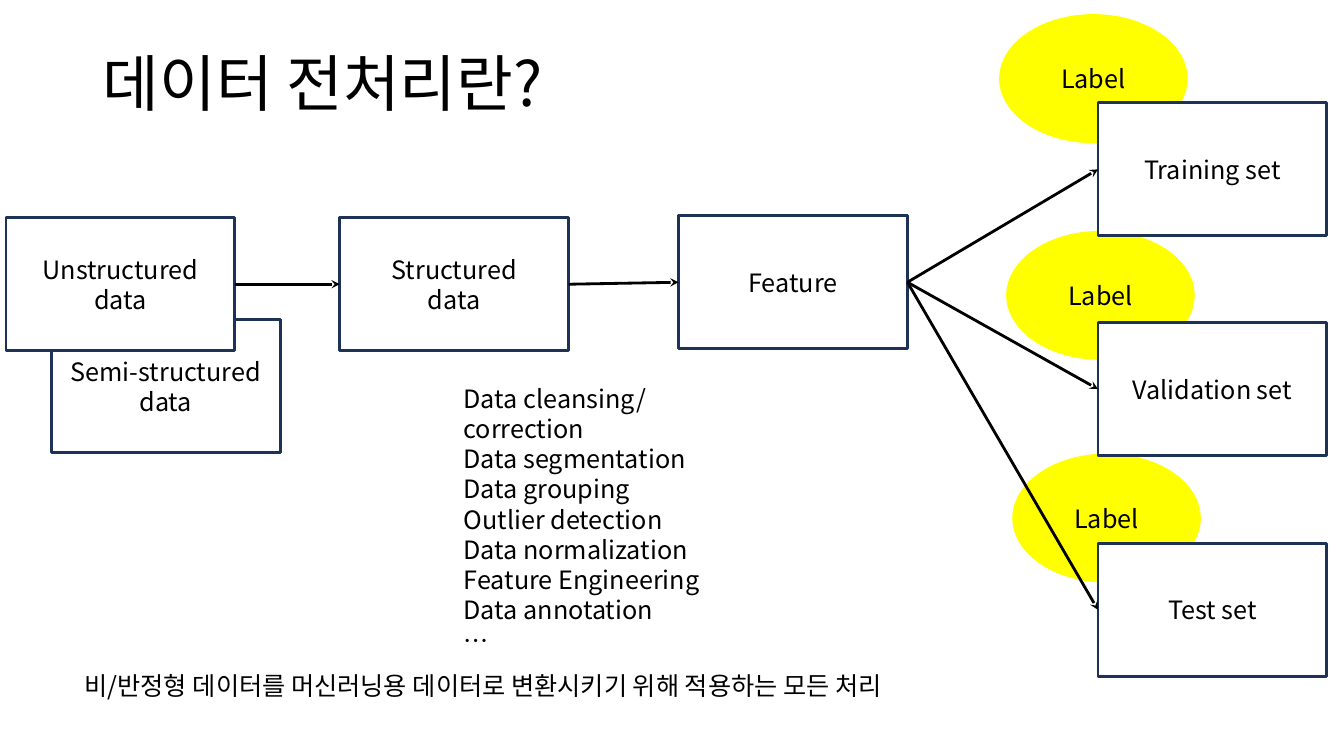
from dataclasses import dataclass

from lxml import etree
from pptx import Presentation
from pptx.dml.color import RGBColor
from pptx.enum.shapes import MSO_CONNECTOR, MSO_SHAPE
from pptx.enum.text import MSO_ANCHOR, PP_ALIGN
from pptx.oxml.ns import qn
from pptx.util import Emu, Pt

RECTANGLE, OVAL = MSO_SHAPE.RECTANGLE, MSO_SHAPE.OVAL
STRAIGHT = MSO_CONNECTOR.STRAIGHT
LEFT, CENTER = PP_ALIGN.LEFT, PP_ALIGN.CENTER
TOP, MIDDLE = MSO_ANCHOR.TOP, MSO_ANCHOR.MIDDLE
LEFT_SIDE, RIGHT_SIDE = 1, 3
PX = 9144  # 100 px to the inch


@dataclass(frozen=True)
class Theme:
    font: str = "Noto Sans CJK KR"
    ink: RGBColor = RGBColor(0, 0, 0)
    paper: RGBColor = RGBColor(255, 255, 255)
    outline: RGBColor = RGBColor(0x1E, 0x32, 0x56)
    label: RGBColor = RGBColor(255, 255, 0)
    title_size: int = 44
    body_size: int = 18
    line_width: int = 2


def px(*lengths):
    return [Emu(length * PX) for length in lengths]


def write_text(frame, text, theme, size=None, align=LEFT, anchor=TOP, spacing=None):
    """Fill a text frame with one paragraph per line of text."""
    frame.word_wrap = True
    frame.vertical_anchor = anchor
    for index, line in enumerate(text.split("\n")):
        paragraph = frame.add_paragraph() if index else frame.paragraphs[0]
        paragraph.alignment = align
        if spacing:
            paragraph.line_spacing = spacing
        run = paragraph.add_run()
        run.text = line
        run.font.name = theme.font
        run.font.size = Pt(size or theme.body_size)
        run.font.color.rgb = theme.ink
        east_asian = etree.SubElement(run.font._element, qn("a:ea"))
        east_asian.set("typeface", theme.font)


class SlideBuilder:
    def __init__(self, slide, theme):
        self.slide = slide
        self.theme = theme

    def text(self, left, top, width, height, text, **text_format):
        box = self.slide.shapes.add_textbox(*px(left, top, width, height))
        write_text(box.text_frame, text, self.theme, **text_format)

    def shape(self, kind, left, top, width, height, text):
        shape = self.slide.shapes.add_shape(kind, *px(left, top, width, height))
        shape.shadow.inherit = False
        write_text(shape.text_frame, text, self.theme, align=CENTER, anchor=MIDDLE)
        return shape

    def box(self, left, top, text, filled=True):
        shape = self.shape(RECTANGLE, left, top, 227, 132, text)
        if filled:
            shape.fill.solid()
            shape.fill.fore_color.rgb = self.theme.paper
        else:
            shape.fill.background()
        shape.line.color.rgb = self.theme.outline
        shape.line.width = Pt(self.theme.line_width)
        return shape

    def label(self, left, top):
        shape = self.shape(OVAL, left, top, 187, 128, "Label")
        shape.fill.solid()
        shape.fill.fore_color.rgb = self.theme.label
        shape.line.fill.background()

    def arrow(self, source, target):
        connector = self.slide.shapes.add_connector(STRAIGHT, 0, 0, 0, 0)
        connector.begin_connect(source, RIGHT_SIDE)
        connector.end_connect(target, LEFT_SIDE)
        connector.line.color.rgb = self.theme.ink
        connector.line.width = Pt(self.theme.line_width)
        line = connector.line._get_or_add_ln()
        etree.SubElement(line, qn("a:tailEnd")).set("type", "stealth")
        etree.SubElement(connector._element.spPr, qn("a:effectLst"))


def main():
    presentation = Presentation()
    presentation.slide_width, presentation.slide_height = px(1333, 750)
    slide = presentation.slides.add_slide(presentation.slide_layouts[6])
    theme = Theme()
    builder = SlideBuilder(slide, theme)

    # Title
    builder.text(92, 40, 1150, 91, "데이터 전처리란?",
                 size=theme.title_size, anchor=MIDDLE, spacing=0.9)

    # Labels behind the data sets
    for left, top in ((991, 14), (998, 229), (1004, 450)):
        builder.label(left, top)

    # Source data and features
    builder.box(51, 317, "Semi-structured\ndata", filled=False)
    unstructured = builder.box(6, 216, "Unstructured\ndata")
    structured = builder.box(337, 216, "Structured\ndata")
    feature = builder.box(673, 214, "Feature")

    # Data sets
    data_sets = [builder.box(1089, top, f"{name} set") for name, top in
                 (("Training", 102), ("Validation", 320), ("Test", 539))]

    # Flow
    builder.arrow(unstructured, structured)
    builder.arrow(structured, feature)
    for data_set in data_sets:
        builder.arrow(feature, data_set)

    # Processing steps and summary
    builder.text(450, 375, 322, 252, "\n".join((
        "Data cleansing/ correction", "Data segmentation", "Data grouping",
        "Outlier detection", "Data normalization", "Feature Engineering",
        "Data annotation", "…")))
    builder.text(74, 660, 935, 40,
                 "비/반정형 데이터를 머신러닝용 데이터로 변환시키기 위해 적용하는 모든 처리")

    presentation.save("out.pptx")


if __name__ == "__main__":
    main()
